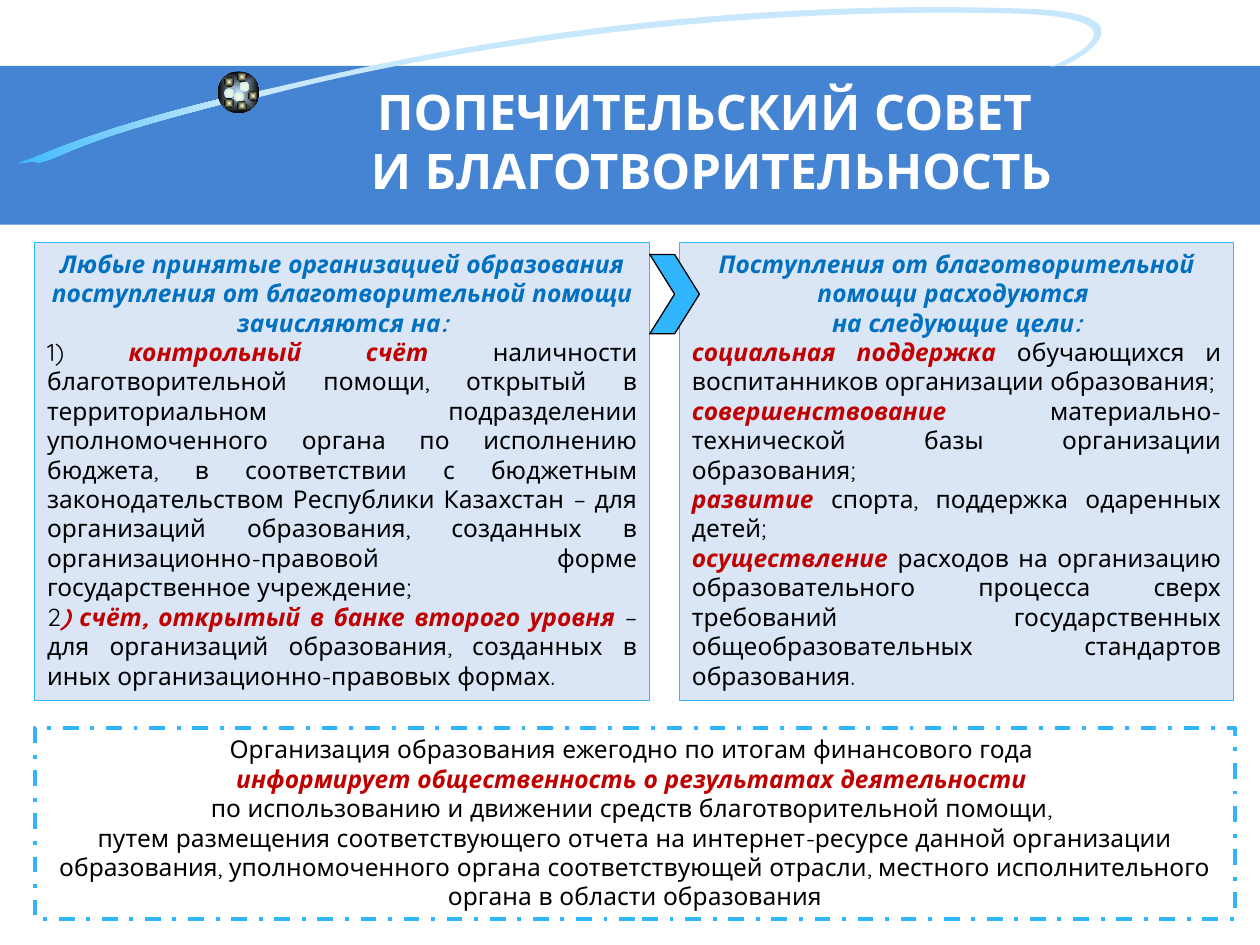
import math

from lxml import etree
from pptx import Presentation
from pptx import util as u
from pptx.dml.color import RGBColor
from pptx.enum import dml, shapes, text
from pptx.oxml.ns import qn

FONT = "Quicksand"
BAND = RGBColor(0x45, 0x84, 0xD3)
SKY = RGBColor(0x31, 0xB6, 0xFD)
PALE = RGBColor(0xC6, 0xE7, 0xFC)
PANEL = RGBColor(0xDA, 0xE6, 0xF6)
CREAM = RGBColor(0xFF, 0xFF, 0xCC)
WHITE = RGBColor(0xFF, 0xFF, 0xFF)
BLACK = RGBColor(0, 0, 0)
BLUE = RGBColor(0x00, 0x70, 0xC0)
RED = RGBColor(0xC0, 0, 0)

TILT = 8.5  # degrees the orbit ribbons lean to the left
CENTER, JUSTIFY = text.PP_ALIGN.CENTER, text.PP_ALIGN.JUSTIFY
HEAD = dict(color=BLUE, bold=True, italic=True)
KEY = dict(color=RED, bold=True, italic=True)


def add_text(p, words, size=14, color=BLACK, bold=False, italic=False):
    """Add formatted text to a paragraph; a newline becomes a line break."""
    for i, line in enumerate(words.split("\n")):
        if i:
            p.add_line_break()
        r = p.add_run()
        r.text = line
        f = r.font
        f.name, f.size, f.bold, f.italic = FONT, u.Pt(size), bold, italic
        f.color.rgb = color


def add_shape(s, kind, x, y, w, h, fill=None, line=None, width=0.75):
    sp = s.shapes.add_shape(kind, u.Cm(x), u.Cm(y), u.Cm(w), u.Cm(h))
    sp.shadow.inherit = False
    if fill is not None:
        sp.fill.solid()
        sp.fill.fore_color.rgb = fill
    if line is None:
        sp.line.fill.background()
    else:
        sp.line.color.rgb = line
        sp.line.width = u.Pt(width)
    return sp


def set_gradient(sp, start, end, radial=False):
    sp.fill.gradient()
    sp.fill.gradient_angle = 0
    for stop, color, pos in zip(sp.fill.gradient_stops, (start, end), (0, 1)):
        stop.color.rgb = color
        stop.position = pos
    if radial:
        grad = sp._element.spPr.find(qn("a:gradFill"))
        grad.remove(grad.find(qn("a:lin")))
        shade = etree.SubElement(grad, qn("a:path"), {"path": "shape"})
        etree.SubElement(shade, qn("a:fillToRect"),
                         dict.fromkeys("ltrb", "50000"))


def add_ball(s, x, y, d, start, end):
    sp = add_shape(s, shapes.MSO_SHAPE.OVAL, x, y, d, d)
    set_gradient(sp, start, end, radial=True)


def add_ribbon(s, box, start, segments):
    """Tilted outline in cm; a segment holds one line point or three Bezier points."""
    x, y, w, h = box
    cos, sin = math.cos(math.radians(TILT)), math.sin(math.radians(TILT))

    def to_box(point):
        dx, dy = point[0] - x - w / 2, point[1] - y - h / 2
        return (u.Cm(w / 2 + dx * cos - dy * sin), u.Cm(h / 2 + dx * sin + dy * cos))

    fb = s.shapes.build_freeform(*to_box(start))
    fb.add_line_segments([to_box(seg[-1]) for seg in segments], close=True)
    sp = fb.convert_to_shape()

    # Replace the straight segments by curves
    outline = next(sp._element.iter(qn("a:path")))
    for child in list(outline):
        outline.remove(child)
    outline.set("w", str(u.Cm(w)))
    outline.set("h", str(u.Cm(h)))
    for i, seg in enumerate([(start,), *segments]):
        tag = "a:cubicBezTo" if len(seg) == 3 else "a:lnTo" if i else "a:moveTo"
        step = etree.SubElement(outline, qn(tag))
        for point in seg:
            px, py = to_box(point)
            etree.SubElement(step, qn("a:pt"), {"x": str(px), "y": str(py)})
    etree.SubElement(outline, qn("a:close"))

    sp.left, sp.top, sp.width, sp.height = (u.Cm(v) for v in box)
    sp.rotation = 360 - TILT
    sp.shadow.inherit = False
    sp.line.fill.background()
    return sp


def add_panel(s, x, y, w, h, paragraphs, fill=PANEL, width=0.75):
    sp = add_shape(s, shapes.MSO_SHAPE.RECTANGLE, x, y, w, h, fill, SKY, width)
    tf = sp.text_frame
    tf.word_wrap = True
    tf.vertical_anchor = text.MSO_ANCHOR.TOP
    tf.auto_size = text.MSO_AUTO_SIZE.SHAPE_TO_FIT_TEXT
    for i, (align, *runs) in enumerate(paragraphs):
        p = tf.add_paragraph() if i else tf.paragraphs[0]
        p.alignment = align
        for words, style in runs:
            add_text(p, words, **style)
    return sp


def add_header(s):
    add_shape(s, shapes.MSO_SHAPE.RECTANGLE, 0, 1.33, 25.4, 3.2, BAND)
    tail = add_ribbon(s, (-0.08, 2.31, 4.67, 0.76), (4.52, 1.98), [
        ((2.31, 2.51), (1.24, 2.95), (0.64, 3.2)),
        ((0.03, 3.4), (0.66, 3.2), (0.79, 3.28)),
        ((1.45, 3.1), (1.45, 2.87), (4.55, 2.08)),
        ((4.55, 2.08), (4.52, 1.98), (4.52, 1.98))])
    set_gradient(tail, SKY, PALE)
    loop = add_ribbon(s, (5.11, -0.38, 18.19, 2.77), (5.13, 1.85), [
        ((6.25, 1.65), (12.34, -0.13), (20.83, 0.18)),
        ((23.29, 0.3), (21.77, 1.19), (21.46, 1.32)),
        ((21.46, 1.32), (21.29, 1.32), (21.18, 1.35)),
        ((21.44, 1.24), (23.29, 0.41), (20.65, 0.28)),
        ((13.92, 0.08), (8.13, 1.19), (5.23, 1.96)),
        ((5.23, 1.96), (5.13, 1.85), (5.13, 1.85))])
    loop.fill.solid()
    loop.fill.fore_color.rgb = PALE

    # Ball with light and dark spots
    add_ball(s, 4.39, 1.44, 0.84, PALE, BLACK)
    for x, y, edge in ((4.83, 1.65, PALE), (4.52, 1.55, BLACK), (4.52, 1.78, PALE),
                       (4.72, 1.85, PALE), (5, 1.83, BLACK), (4.78, 2.03, BLACK),
                       (4.52, 1.98, BLACK), (4.78, 1.45, BLACK)):
        add_ball(s, x, y, 0.2, CREAM, edge)


def add_title(s, words):
    sp = s.shapes.title
    sp.left, sp.top, sp.width, sp.height = (u.Cm(v) for v in (4.09, 1.52, 20.5, 2.84))
    s.shapes._spTree.append(sp._element)  # bring in front of the band
    tf = sp.text_frame
    tf.word_wrap = True
    tf.vertical_anchor = text.MSO_ANCHOR.TOP
    p = tf.paragraphs[0]
    p.alignment = CENTER
    add_text(p, words, size=28, color=WHITE, bold=True)


def main():
    prs = Presentation()
    prs.slide_width, prs.slide_height = u.Cm(25.4), u.Cm(19.05)
    s = prs.slides.add_slide(prs.slide_layouts[5])
    add_header(s)

    # Where donations are credited
    add_panel(s, 0.7, 4.89, 12.4, 9.24, [
        (CENTER, ("Любые принятые организацией образования поступления от "
                  "благотворительной помощи зачисляются на:", HEAD)),
        (JUSTIFY, ("1) ", {}), ("контрольный счёт ", KEY),
         ("наличности благотворительной помощи, открытый в территориальном "
          "подразделении уполномоченного органа по исполнению бюджета, в "
          "соответствии с бюджетным законодательством Республики Казахстан – для "
          "организаций образования, созданных в организационно-правовой форме "
          "государственное учреждение;", {})),
        (JUSTIFY, ("2", {}), (") счёт, открытый в банке второго уровня ", KEY),
         ("– для организаций образования, созданных в иных "
          "организационно-правовых формах.", {}))])

    # What donations are spent on
    add_panel(s, 13.7, 4.89, 11.17, 9.24, [
        (CENTER, ("Поступления от благотворительной помощи расходуются ", HEAD)),
        (CENTER, ("на следующие цели:", HEAD)),
        (JUSTIFY, ("социальная поддержка ", KEY),
         ("обучающихся и воспитанников организации образования;", {})),
        (JUSTIFY, ("совершенствование", KEY),
         (" материально-технической базы организации образования;", {})),
        (JUSTIFY, ("развитие ", KEY), ("спорта, поддержка одаренных детей;", {})),
        (JUSTIFY, ("осуществление", KEY),
         (" расходов на организацию образовательного процесса сверх требований "
          "государственных общеобразовательных стандартов образования.", {}))])

    # Yearly report
    report = add_panel(s, 0.7, 14.68, 24.2, 3.84, [
        (CENTER, ("Организация образования ежегодно по итогам финансового года ", {})),
        (CENTER, ("информирует общественность о результатах деятельности ", KEY)),
        (CENTER, ("по использованию и движении средств благотворительной помощи, ", {})),
        (CENTER, ("путем размещения соответствующего отчета на интернет-ресурсе данной "
                  "организации образования, уполномоченного органа соответствующей "
                  "отрасли, местного исполнительного органа в области образования", {}))],
        fill=WHITE, width=2.25)
    report.line.dash_style = dml.MSO_LINE.DASH_DOT

    add_title(s, "ПОПЕЧИТЕЛЬСКИЙ СОВЕТ \nИ БЛАГОТВОРИТЕЛЬНОСТЬ")
    add_shape(s, shapes.MSO_SHAPE.CHEVRON, 13.1, 5.13, 1, 1.6, SKY, BLACK)
    prs.save("out.pptx")


if __name__ == "__main__":
    main()
